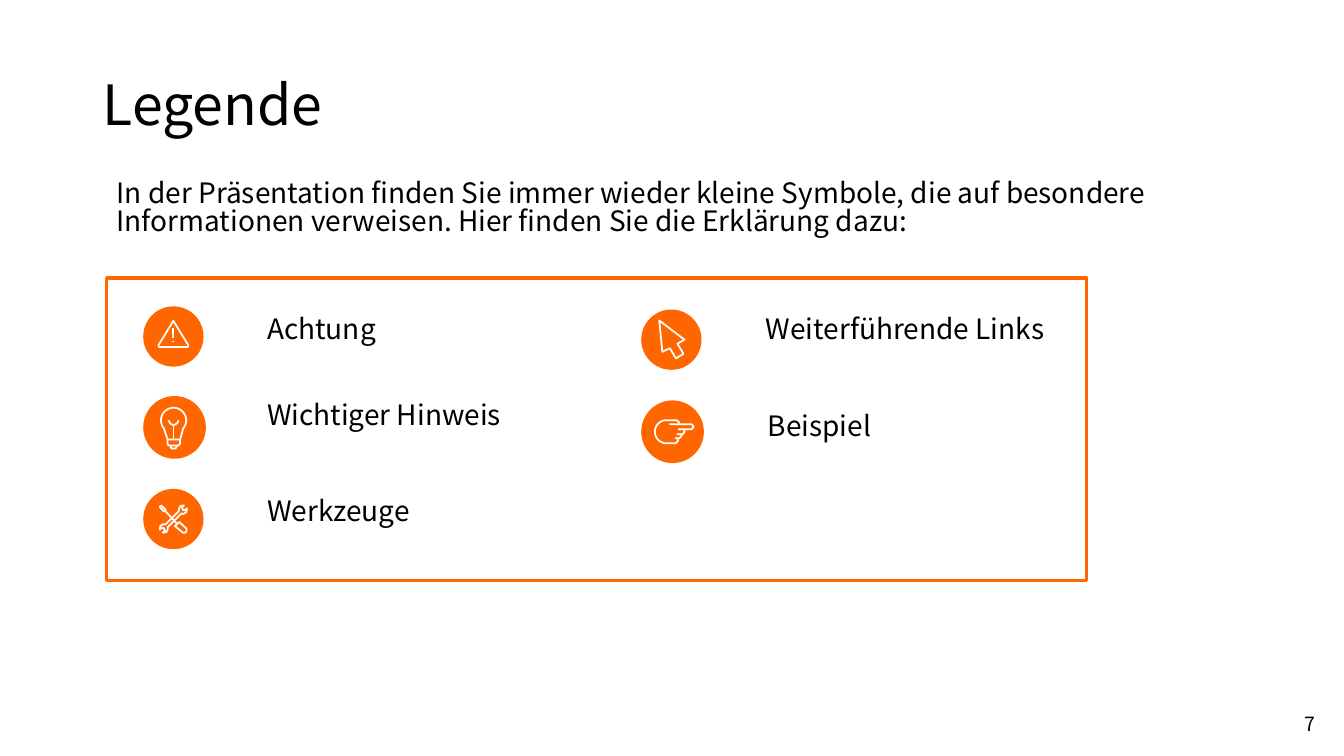
"""Build the legend slide with five explained symbols."""
import math
import pptx
import pptx.util
import pptx.dml.color
import pptx.enum.shapes
import pptx.enum.text

Cm = pptx.util.Cm
Pt = pptx.util.Pt
ORANGE = pptx.dml.color.RGBColor(0xFF, 0x66, 0x00)
WHITE = pptx.dml.color.RGBColor(0xFF, 0xFF, 0xFF)
BLACK = pptx.dml.color.RGBColor(0x00, 0x00, 0x00)
KIND = pptx.enum.shapes.MSO_SHAPE
ALIGN = pptx.enum.text.PP_ALIGN
ANCHOR = pptx.enum.text.MSO_ANCHOR
UNIT = 0.0254


def arc(x, y, size, start, stop):
    return [(x + size * math.cos(math.radians(a)),
             y + size * math.sin(math.radians(a)))
            for a in range(start, stop + 1, 10)]


def loop(*points):
    return [*points, points[0]]


JAW = [(5.5, -8), (5.5, -10), (7, -13), (10.5, -13.5), (8.5, -11.5),
       (9.5, -9), (11.5, -9), (13.5, -10.5), (13, -7), (10, -5), (8, -5.5)]

WARN = [
    loop((0, -15.5), (15, 9), (14, 10.5), (-14, 10.5), (-15, 9)),
    [(0, -8), (0, 2)],
    [(0, 5), (0, 6)],
]
BULB = [
    loop((-7, 12), *arc(-1, -7, 12.5, 140, 400), (5.5, 12)),
    [(-7, 12), (-7, 16), (-6, 18), (4, 18), (5.5, 16), (5.5, 12)],
    [(-4.5, 18), (-3, 21), (1, 21), (2.5, 18)],
    [(-6, -7), (-4.5, -4), (-1, -2), (2.5, -4), (4, -7)],
    [(-1, -2), (-1, 12)],
]
TOOLS = [
    loop((-13.5, -12), (-12, -13.5), (-7.5, -9), (-9.5, -7.5)),
    [(-8.5, -8.5), (4, 5)],
    loop((1.5, 7), (6, 3), (13, 9.5), (13, 12), (12, 13.5), (9.5, 13.5)),
    loop(*JAW, *[(-x, -y) for x, y in JAW]),
]
ARROW = [loop((-12, -19), (13, 0), (6, 4), (12, 14), (4.5, 18.5),
              (-1.5, 8.5), (-9, 12))]
HAND = [
    [(-6, 11.5), *arc(-6, 0, 11.5, 90, 270), (4, -11.5), (6.5, -9.5),
     (6, -7.5)],
    [(-3, -7.5), (19, -7.5), (21, -5), (19, -2.5), (5.5, -2.5)],
    [(11, -2.5), (12, 0), (10, 2.5), (4, 2.5)],
    [(8.5, 2.5), (9, 4.5), (6.5, 6.5), (2.5, 6.5)],
    [(5, 6.5), (5.5, 9), (3, 11.5), (-6, 11.5)],
]

ITEMS = [
    (WARN, 4.37, 8.48, 0.76, "Achtung", 6.48, 7.85),
    (BULB, 4.4, 10.77, 0.79, "Wichtiger Hinweis", 6.48, 10.03),
    (TOOLS, 4.37, 13.08, 0.76, "Werkzeuge", 6.48, 12.45),
    (ARROW, 16.92, 8.56, 0.76, "Weiterführende Links", 19.05, 7.85),
    (HAND, 16.95, 10.88, 0.79, "Beispiel", 19.1, 10.31),
]


class Deck:
    """Hold the text style and the current slide."""

    def __init__(self):
        self.show = pptx.Presentation()
        self.show.slide_width = Cm(33.87)
        self.show.slide_height = Cm(19.05)
        self.slide = self.show.slides.add_slide(self.show.slide_layouts[6])
        self.style = {"name": "Noto Sans CJK KR", "size": Pt(20)}

    def text(self, words, x, y, wide, high, align=ALIGN.LEFT, frame=None,
             **font):
        box = self.slide.shapes.add_textbox(Cm(x), Cm(y), Cm(wide), Cm(high))
        body = box.text_frame
        for key, value in {"word_wrap": True, **(frame or {})}.items():
            setattr(body, key, value)
        para = body.paragraphs[0]
        para.text = words
        para.alignment = align
        para.line_spacing = 0.85
        run = para.runs[0]
        for key, value in {**self.style, **font}.items():
            setattr(run.font, key, value)
        run.font.color.rgb = BLACK

    def paint(self, shape, fill=None, line=None, width=0):
        shape.shadow.inherit = False
        for part, color in ((shape.fill, fill), (shape.line.fill, line)):
            if color is None:
                part.background()
            else:
                part.solid()
                part.fore_color.rgb = color
        if line is not None:
            shape.line.width = Pt(width)

    def shape(self, kind, x, y, wide, high, **look):
        item = self.slide.shapes.add_shape(kind, Cm(x), Cm(y), Cm(wide),
                                           Cm(high))
        self.paint(item, **look)

    def icon(self, strokes, x, y, size):
        self.shape(KIND.OVAL, x - size, y - size, 2 * size, 2 * size,
                   fill=ORANGE)
        paths = [[(Cm(x + UNIT * a), Cm(y + UNIT * b)) for a, b in stroke]
                 for stroke in strokes]
        pen = self.slide.shapes.build_freeform(*paths[0][0])
        for path in paths:
            if path is not paths[0]:
                pen.move_to(*path[0])
            pen.add_line_segments(path[1:], close=path[0] == path[-1])
        self.paint(pen.convert_to_shape(), line=WHITE, width=1.25)


def main():
    deck = Deck()
    deck.text("Legende", 2.34, 1.88, 29.21, 1.7, size=Pt(39.6),
              frame={"vertical_anchor": ANCHOR.MIDDLE,
                     "margin_top": 0, "margin_bottom": 0})
    deck.text("In der Präsentation finden Sie immer wieder kleine Symbole, "
              "die auf besondere Informationen verweisen. Hier finden Sie "
              "die Erklärung dazu:", 2.69, 4.42, 27.48, 1.96)
    deck.shape(KIND.RECTANGLE, 2.69, 7.01, 24.69, 7.62, line=ORANGE,
               width=2.5)
    for strokes, x, y, size, words, left, top in ITEMS:
        deck.icon(strokes, x, y, size)
        deck.text(words, left, top, 9.12 if left < 10 else 11.84, 1.12)
    deck.text("7", 26.04, 17.91, 7.37, 0.86, ALIGN.RIGHT, size=Pt(14))
    deck.show.save("out.pptx")


if __name__ == "__main__":
    main()
